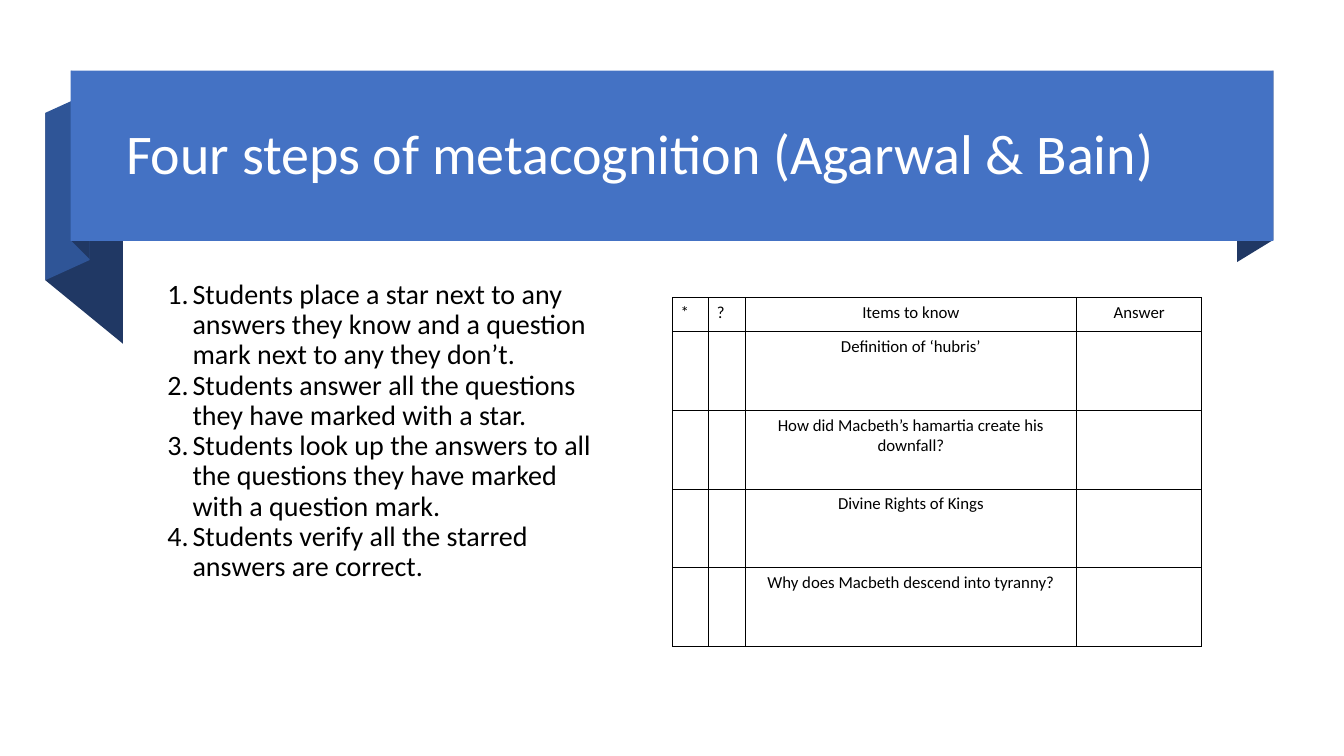
from lxml import etree
from pptx import Presentation
from pptx.dml.color import RGBColor
from pptx.enum.shapes import MSO_SHAPE
from pptx.enum.text import MSO_ANCHOR, MSO_AUTO_SIZE, PP_ALIGN
from pptx.oxml.ns import qn
from pptx.util import Inches, Pt

BLUE = RGBColor(0x44, 0x72, 0xC4)
MID_BLUE = RGBColor(0x2F, 0x55, 0x97)
NAVY = RGBColor(0x20, 0x38, 0x64)
WHITE = RGBColor(0xFF, 0xFF, 0xFF)
BLACK = RGBColor(0, 0, 0)
FONT = "Calibri"

TITLE = "Four steps of metacognition (Agarwal & Bain)"
STEPS = [
    "Students place a star next to any answers they know and a question mark next to any they don’t.",
    "Students answer all the questions they have marked with a star.",
    "Students look up the answers to all the questions they have marked with a question mark.",
    "Students verify all the starred answers are correct.",
]
HEADINGS = ["*", "?", "Items to know", "Answer"]
ITEMS = [
    "Definition of ‘hubris’",
    "How did Macbeth’s hamartia create his downfall?",
    "Divine Rights of Kings",
    "Why does Macbeth descend into tyranny?",
]
ROWS = [HEADINGS] + [["", "", item, ""] for item in ITEMS]
COLUMN_WIDTHS = [0.36, 0.36, 3.29, 1.24]
ROW_HEIGHTS = [0.34] + [0.78] * len(ITEMS)

TITLE_BOX = (1.15, 0.83, 11.27, 1.45)
STEPS_BOX = (1.56, 2.73, 4.43, 3.9)
BANNER_BOX = (0.7, 0.7, 11.93, 1.69)
FOLDS = [  # colour, corners
    (NAVY, [(12.63, 2.38), (12.27, 2.6), (12.27, 0.91), (12.63, 0.7)]),
    (NAVY, [(1.22, 3.41), (0.45, 2.78), (0.45, 1.12), (1.22, 1.75)]),
    (MID_BLUE, [(0.89, 2.58), (0.45, 2.78), (0.45, 1.12), (0.89, 0.92)]),
    (NAVY, [(0.89, 2.57), (0.71, 2.39), (0.71, 0.7), (0.89, 0.89)]),
]


def paint(shape, color):
    shape.shadow.inherit = False
    shape.fill.solid()
    shape.fill.fore_color.rgb = color
    shape.line.fill.background()


def add_ribbon(slide):
    ribbon = slide.shapes.add_group_shape()
    for color, corners in FOLDS:
        points = [(Inches(x), Inches(y)) for x, y in corners]
        builder = ribbon.shapes.build_freeform(*points[0])
        builder.add_line_segments(points[1:], close=True)
        paint(builder.convert_to_shape(), color)
    banner = ribbon.shapes.add_shape(MSO_SHAPE.RECTANGLE, *map(Inches, BANNER_BOX))
    paint(banner, BLUE)


def set_font(paragraph, size, color):
    paragraph.font.name = FONT
    paragraph.font.size = Pt(size)
    paragraph.font.color.rgb = color


def fill_placeholder(shape, box, lines, size, color, anchor):
    """Place the shape above the ribbon and write one paragraph per line."""
    shape.left, shape.top, shape.width, shape.height = map(Inches, box)
    frame = shape.text_frame
    frame.text = "\n".join(lines)
    frame.word_wrap = True
    frame.auto_size = MSO_AUTO_SIZE.NONE
    frame.vertical_anchor = anchor
    for paragraph in frame.paragraphs:
        paragraph.alignment = PP_ALIGN.LEFT
        paragraph.line_spacing = 0.9
        paragraph.space_before = paragraph.space_after = Pt(0)
        set_font(paragraph, size, color)
    tree = shape._element.getparent()
    tree.append(shape._element)


def number_paragraph(paragraph):
    properties = paragraph._p.get_or_add_pPr()
    properties.set("marL", str(Inches(0.25)))
    properties.set("indent", str(-Inches(0.25)))
    bullet_font = etree.SubElement(properties, qn("a:buFont"))
    bullet_font.set("typeface", "+mj-lt")
    numbering = etree.SubElement(properties, qn("a:buAutoNum"))
    numbering.set("type", "arabicPeriod")
    properties.append(properties.find(qn("a:defRPr")))


def add_borders(cell):
    properties = cell._tc.get_or_add_tcPr()
    for position, side in enumerate(("lnL", "lnR", "lnT", "lnB")):
        line = etree.Element(qn(f"a:{side}"), w=str(Pt(0.5)))
        fill = etree.SubElement(line, qn("a:solidFill"))
        etree.SubElement(fill, qn("a:srgbClr"), val=str(BLACK))
        properties.insert(position, line)


def add_answer_table(slide):
    frame = slide.shapes.add_table(
        len(ROWS), len(HEADINGS), Inches(6.67), Inches(2.95),
        Inches(sum(COLUMN_WIDTHS)), Inches(sum(ROW_HEIGHTS)))
    table = frame.table
    table.first_row = table.horz_banding = False
    for column, width in zip(table.columns, COLUMN_WIDTHS):
        column.width = Inches(width)
    for row, height, texts in zip(table.rows, ROW_HEIGHTS, ROWS):
        row.height = Inches(height)
        for index, (cell, text) in enumerate(zip(row.cells, texts)):
            cell.text = text
            cell.margin_left = cell.margin_right = Inches(0.08)
            cell.margin_top = cell.margin_bottom = Inches(0.05)
            cell.fill.background()
            add_borders(cell)
            paragraph = cell.text_frame.paragraphs[0]
            paragraph.alignment = PP_ALIGN.LEFT if index < 2 else PP_ALIGN.CENTER
            set_font(paragraph, 12, BLACK)


def main():
    presentation = Presentation()
    presentation.slide_width = Inches(13.33)
    presentation.slide_height = Inches(7.5)
    slide = presentation.slides.add_slide(presentation.slide_layouts[1])
    title, steps = slide.placeholders
    add_ribbon(slide)
    fill_placeholder(title, TITLE_BOX, [TITLE], 40, WHITE, MSO_ANCHOR.MIDDLE)
    fill_placeholder(steps, STEPS_BOX, STEPS, 20, BLACK, MSO_ANCHOR.TOP)
    for paragraph in steps.text_frame.paragraphs:
        number_paragraph(paragraph)
    steps.text_frame.paragraphs[-1].space_after = Pt(8)
    add_answer_table(slide)
    presentation.save("out.pptx")


if __name__ == "__main__":
    main()
